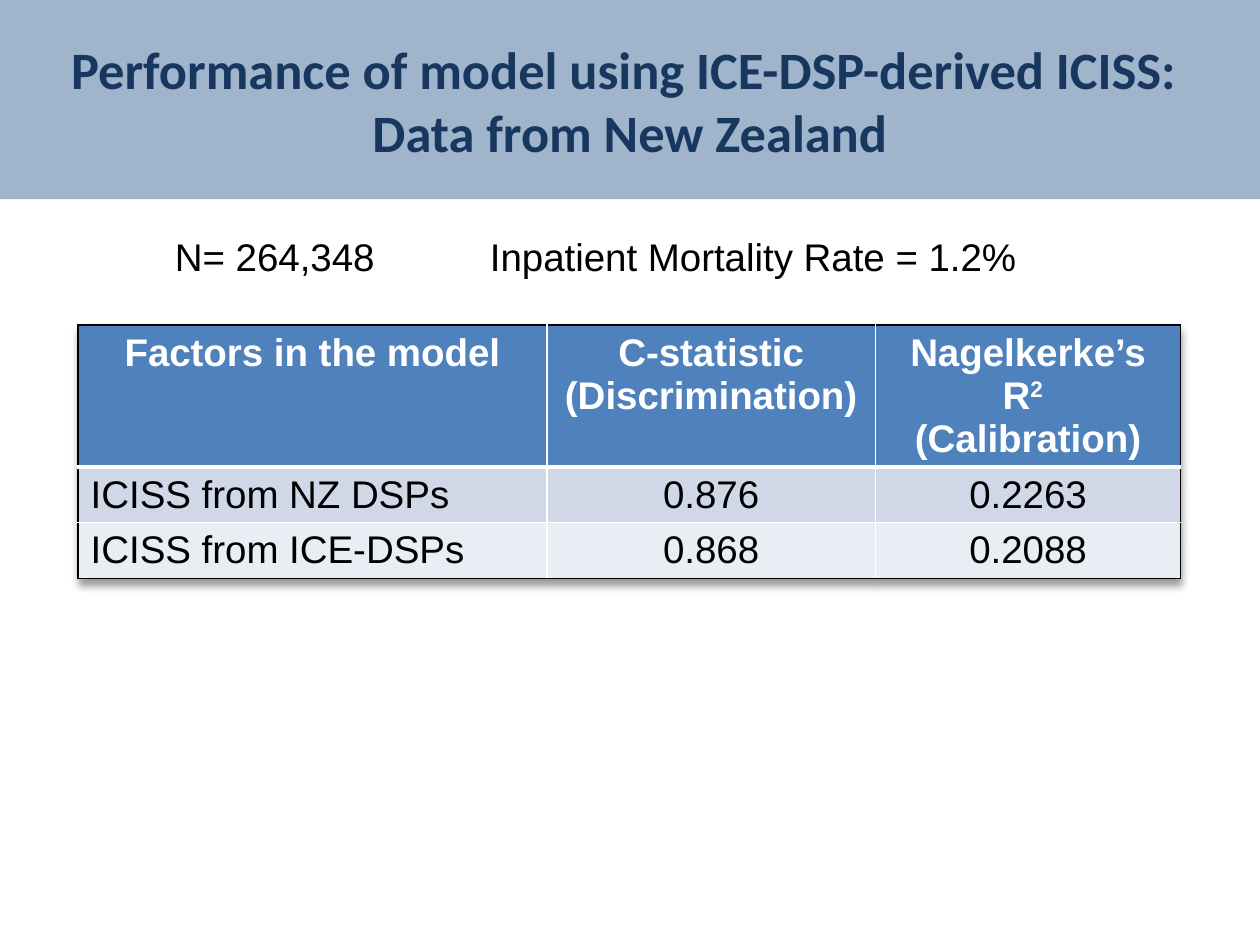
import pptx
import pptx.dml.color
import pptx.enum.shapes
import pptx.enum.text
import pptx.oxml
import pptx.oxml.ns
import pptx.util
from pptx.util import Inches, Pt

RGBColor = pptx.dml.color.RGBColor
BLACK = RGBColor(0x00, 0x00, 0x00)
WHITE = RGBColor(0xFF, 0xFF, 0xFF)
NAVY = RGBColor(0x17, 0x37, 0x5E)
BAND_BLUE = RGBColor(0x37, 0x60, 0x92)
HEADER_BLUE = RGBColor(0x4F, 0x81, 0xBD)
ROW_FILLS = [RGBColor(0xD0, 0xD8, 0xE8), RGBColor(0xE9, 0xED, 0xF4)]

COLUMN_WIDTHS = [3.72, 2.61, 2.42]
ROW_HEIGHTS = [0.83, 0.41, 0.41]
ROWS = [
    ["Factors in the model", "C-statistic (Discrimination)", ["Nagelkerke’s R", "2", "  (Calibration)"]],
    ["ICISS from NZ DSPs", "0.876", "0.2263"],
    ["ICISS from ICE-DSPs", "0.868", "0.2088"],
]
NAMESPACE = pptx.oxml.ns.nsdecls("a")
TABLE_SHADOW = (
    f'<a:effectLst {NAMESPACE}><a:outerShdw blurRad="50800" dist="38100" dir="5400000">'
    '<a:srgbClr val="000000"><a:alpha val="40000"/></a:srgbClr></a:outerShdw></a:effectLst>'
)


class SlideBuilder:
    title_font, body_font = "Calibri", "Arial"
    title_size, body_size = Pt(30), Pt(22)

    def __init__(self, deck):
        self.page = deck.slides.add_slide(deck.slide_layouts[5])

    def format_runs(self, para, font, size, color, bold=False):
        for span in para.runs:
            span.font.name = font
            span.font.size = size
            span.font.bold = bold
            span.font.color.rgb = color

    def add_band(self, left, top, width, height, color, opacity):
        """Add a translucent rectangle behind everything else."""
        band = self.page.shapes.add_shape(
            pptx.enum.shapes.MSO_SHAPE.RECTANGLE,
            Inches(left), Inches(top), Inches(width), Inches(height))
        band.shadow.inherit = False
        band.line.fill.background()
        band.fill.solid()
        band.fill.fore_color.rgb = color
        swatch = band.fill._xPr.find(".//" + pptx.oxml.ns.qn("a:srgbClr"))
        swatch.append(pptx.oxml.parse_xml(f'<a:alpha {NAMESPACE} val="{opacity * 1000}"/>'))
        self.page.shapes._spTree.insert(2, band._element)

    def set_title(self, text, left, top, width, height):
        title = self.page.shapes.title
        title.left, title.top = Inches(left), Inches(top)
        title.width, title.height = Inches(width), Inches(height)
        frame = title.text_frame
        frame.auto_size = pptx.enum.text.MSO_AUTO_SIZE.NONE
        frame.vertical_anchor = pptx.enum.text.MSO_ANCHOR.MIDDLE
        para = frame.paragraphs[0]
        para.text = text
        para.alignment = pptx.enum.text.PP_ALIGN.CENTER
        self.format_runs(para, self.title_font, self.title_size, NAVY, True)

    def add_text(self, text, left, top, width, height):
        box = self.page.shapes.add_textbox(
            Inches(left), Inches(top), Inches(width), Inches(height))
        box.text_frame.word_wrap = True
        box.text_frame.text = text
        self.format_runs(box.text_frame.paragraphs[0], self.body_font, self.body_size, BLACK)

    def add_table(self, rows, left, top, widths, heights):
        frame = self.page.shapes.add_table(
            len(rows), len(widths), Inches(left), Inches(top),
            Inches(sum(widths)), Inches(sum(heights)))
        table = frame.table
        table._tbl.tblPr.insert(0, pptx.oxml.parse_xml(TABLE_SHADOW))
        for column, width in zip(table.columns, widths):
            column.width = Inches(width)
        for row, height in zip(table.rows, heights):
            row.height = Inches(height)
        last_row, last_column = len(rows) - 1, len(widths) - 1
        for r, values in enumerate(rows):
            for c, value in enumerate(values):
                cell = table.cell(r, c)
                outer = {"L": c == 0, "R": c == last_column, "T": r == 0, "B": r == last_row}
                thick_side = {0: "B", 1: "T"}.get(r)
                for side, is_outer in outer.items():
                    self.add_border(cell, side, BLACK if is_outer else WHITE,
                                    3 if side == thick_side else 1)
                self.fill_cell(cell, value, r == 0, ROW_FILLS[(r - 1) % 2], r == 0 or c > 0)

    def add_border(self, cell, side, color, points):
        cell._tc.get_or_add_tcPr().append(pptx.oxml.parse_xml(
            f'<a:ln{side} {NAMESPACE} w="{Pt(points)}"><a:solidFill>'
            f'<a:srgbClr val="{color}"/></a:solidFill></a:ln{side}>'))

    def fill_cell(self, cell, value, is_header, row_fill, centered):
        """Write a string, or a list whose every second part is superscript."""
        cell.fill.solid()
        cell.fill.fore_color.rgb = HEADER_BLUE if is_header else row_fill
        para = cell.text_frame.paragraphs[0]
        for i, part in enumerate([value] if isinstance(value, str) else value):
            span = para.add_run()
            span.text = part
            if i % 2:
                span.font._element.set("baseline", "30000")
        if centered:
            para.alignment = pptx.enum.text.PP_ALIGN.CENTER
        self.format_runs(para, self.body_font, self.body_size,
                         WHITE if is_header else BLACK, is_header)


def main():
    deck = pptx.Presentation()
    deck.slide_width, deck.slide_height = Inches(10), Inches(7.5)
    builder = SlideBuilder(deck)
    builder.add_band(0, 0, 10, 1.58, BAND_BLUE, 47)
    builder.set_title("Performance of model using ICE-DSP-derived ICISS: \vData from New Zealand",
                      0.25, 0.17, 9.5, 1.25)
    builder.add_table(ROWS, 0.62, 2.58, COLUMN_WIDTHS, ROW_HEIGHTS)
    builder.add_text("N= 264,348\t\tInpatient Mortality Rate = 1.2%", 1.29, 1.8, 7.42, 0.47)
    deck.save("out.pptx")


if __name__ == "__main__":
    main()
